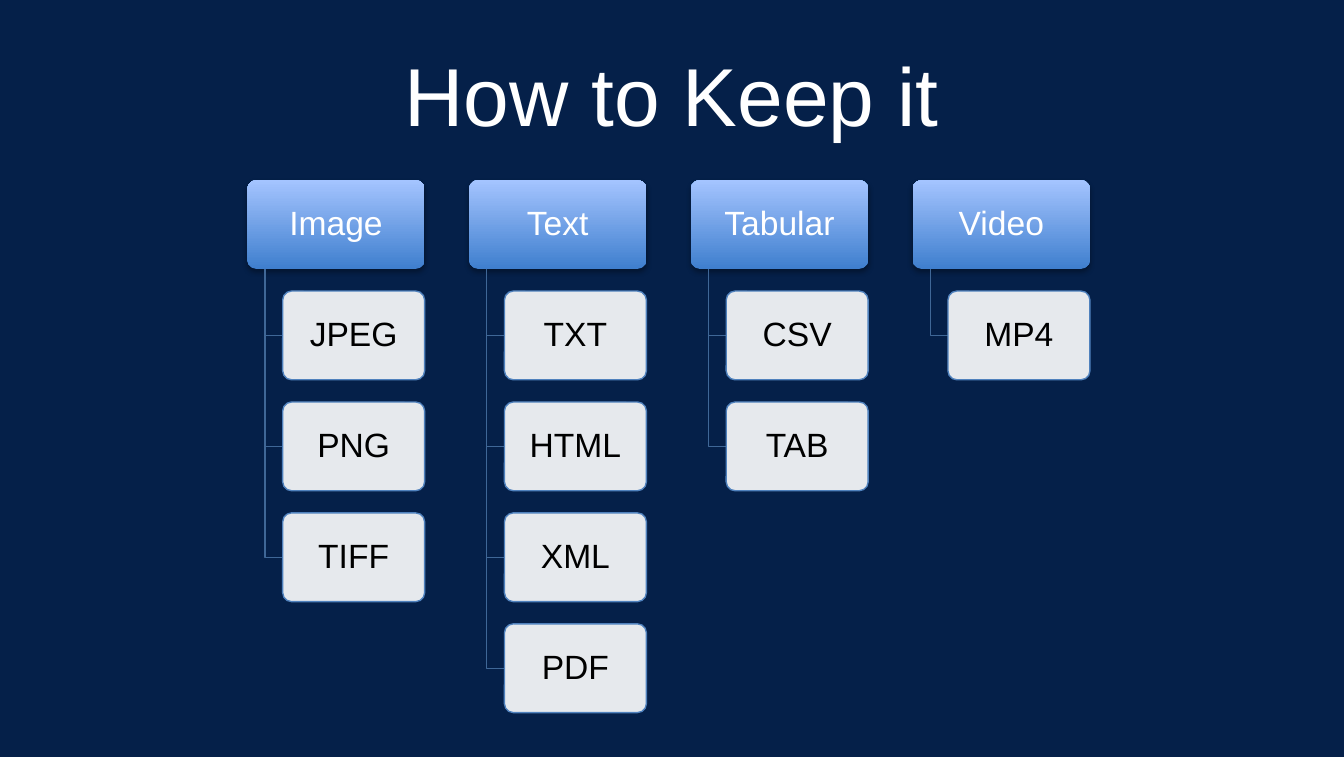
"""Builds a slide that groups preservation file formats by content type."""
from lxml import etree
from pptx import Presentation
from pptx.dml.color import RGBColor
from pptx.enum import shapes, text
from pptx.oxml.ns import qn
from pptx.util import Inches, Pt

TITLE = "How to Keep it"
FORMATS = {
    "Image": ["JPEG", "PNG", "TIFF"],
    "Text": ["TXT", "HTML", "XML", "PDF"],
    "Tabular": ["CSV", "TAB"],
    "Video": ["MP4"],
}
COLORS = {
    "background": "052049",
    "white": "FFFFFF",
    "black": "000000",
    "deep": "3F7FCE",
    "pale": "A4C4FF",
    "branch": "3F6797",
    "border": "4F81BD",
}
FONT = "Arial"
LEFT, TOP = 1.84, 1.34
WIDTH, HEIGHT = 1.32, 0.66
COLUMN_STEP, ROW_STEP = WIDTH * 1.25, HEIGHT * 1.25
INDENT = WIDTH / 10
INSET_X, INSET_Y = 0.06, 0.05


def rgb(name):
    return RGBColor.from_string(COLORS[name])


def style_text(frame, size, color):
    frame.word_wrap = True
    frame.vertical_anchor = text.MSO_ANCHOR.MIDDLE
    paragraph = frame.paragraphs[0]
    paragraph.alignment = text.PP_ALIGN.CENTER
    font = paragraph.runs[0].font
    font.name, font.size = FONT, Pt(size)
    font.color.rgb = rgb(color)


def add_box(slide, label, left, top, width, color):
    box = slide.shapes.add_shape(
        shapes.MSO_SHAPE.ROUNDED_RECTANGLE,
        Inches(left), Inches(top), Inches(width), Inches(HEIGHT))
    box.adjustments[0] = 0.1
    box.shadow.inherit = False
    frame = box.text_frame
    frame.text = label
    frame.margin_left = frame.margin_right = Inches(INSET_X)
    frame.margin_top = frame.margin_bottom = Inches(INSET_Y)
    style_text(frame, 18, color)
    frame.paragraphs[0].line_spacing = 0.9
    return box


def add_category(slide, label, left):
    category = add_box(slide, label, left, TOP, WIDTH, "white")
    category.line.fill.background()
    category.fill.gradient()
    category.fill.gradient_angle = 90
    for stop, color in zip(category.fill.gradient_stops, ("deep", "pale")):
        stop.color.rgb = rgb(color)
    effects = category._element.spPr.find(qn("a:effectLst"))
    shadow = etree.SubElement(
        effects, qn("a:outerShdw"), blurRad=str(Pt(3.1)), dist=str(Pt(1.8)),
        dir="5400000", rotWithShape="0")
    shade = etree.SubElement(shadow, qn("a:srgbClr"), val=COLORS["black"])
    etree.SubElement(shade, qn("a:alpha"), val="35000")


def add_format(slide, label, left, top):
    entry = add_box(slide, label, left, top, WIDTH - 2 * INDENT, "black")
    entry.fill.solid()
    entry.fill.fore_color.rgb = rgb("white")
    shade = entry._element.spPr.find(qn("a:solidFill"))[0]
    etree.SubElement(shade, qn("a:alpha"), val="90000")
    entry.line.color.rgb = rgb("border")
    entry.line.width = Pt(0.75)


def add_branch(slide, left, middle):
    start, end = Inches(left), Inches(left + INDENT)
    level = Inches(middle)
    builder = slide.shapes.build_freeform(start, Inches(TOP + HEIGHT))
    builder.add_line_segments([(start, level), (end, level)], close=False)
    branch = builder.convert_to_shape()
    branch.shadow.inherit = False
    branch.fill.background()
    branch.line.color.rgb = rgb("branch")
    branch.line.width = Pt(0.75)


def main():
    deck = Presentation()
    deck.slide_width, deck.slide_height = Inches(10), Inches(5.63)
    slide = deck.slides.add_slide(deck.slide_layouts[5])
    slide.background.fill.solid()
    slide.background.fill.fore_color.rgb = rgb("background")

    heading = slide.shapes.title
    heading.left, heading.top = Inches(0.5), Inches(0.23)
    heading.width, heading.height = Inches(9), Inches(0.94)
    heading.text_frame.text = TITLE
    style_text(heading.text_frame, 44, "white")

    for column, (category, entries) in enumerate(FORMATS.items()):
        left = LEFT + column * COLUMN_STEP
        add_category(slide, category, left)
        for row, entry in enumerate(entries, start=1):
            top = TOP + row * ROW_STEP
            add_branch(slide, left + INDENT, top + HEIGHT / 2)
            add_format(slide, entry, left + 2 * INDENT, top)

    deck.save("out.pptx")


if __name__ == "__main__":
    main()
